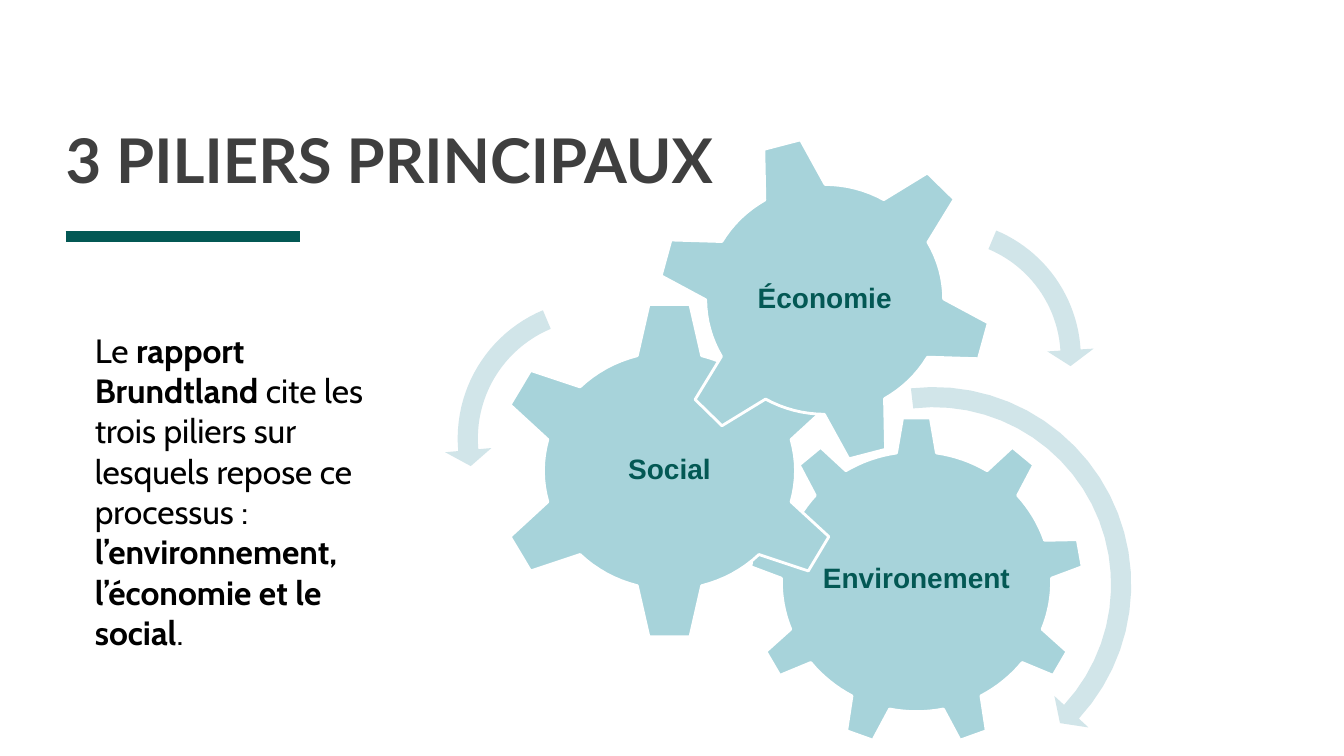
from math import cos, degrees, radians, sin

from lxml.etree import SubElement
from pptx import Presentation
from pptx.dml.color import RGBColor
from pptx.enum.shapes import MSO_CONNECTOR
from pptx.enum.text import MSO_ANCHOR, MSO_AUTO_SIZE, PP_ALIGN
from pptx.oxml.ns import qn
from pptx.util import Inches, Pt

WHITE = RGBColor(0xFF, 0xFF, 0xFF)
BLACK = RGBColor(0x00, 0x00, 0x00)
CHARCOAL = RGBColor(0x3F, 0x3F, 0x3F)
DARK_TEAL = RGBColor(0x03, 0x58, 0x54)
GEAR_BLUE = RGBColor(0xA7, 0xD3, 0xDA)
ARROW_BLUE = RGBColor(0xD1, 0xE5, 0xE9)

ARC_STEPS = 24
BAND_HALF = 0.1
HEAD_HALF = 0.23
HEAD_LENGTH = 0.16

# label, centre, teeth, first tooth angle, root radii, tip radii, root and tip half angles
GEARS = [
    ("Environement", (4.69, 4.47), 9, 0, (1.34, 1.29), (1.65, 1.63), 8.5, 4.8),
    ("Social", (2.24, 3.37), 6, 0, (1.25, 1.18), (1.72, 1.66), 14.8, 6.8),
    ("Économie", (3.78, 1.67), 6, -15, (1.18, 1.14), (1.64, 1.6), 15.2, 6.6),
]
# centre, middle radius, start angle, end angle
ARROWS = [
    ((4.86, 4.5), 1.86, -6.6, 132.7),
    ((1.52, 3.05), 1.28, -22.8, -95.2),
    ((4.95, 2.25), 1.27, 22.8, 86.5),
]
REPORT_RUNS = [
    ("Le ", False),
    ("rapport Brundtland ", True),
    ("cite les trois piliers sur lesquels repose ce processus : ", False),
    ("l’environnement, l’économie et le social", True),
    (".", False),
]


def place(shape, left, top, width, height):
    shape.left, shape.top = Inches(left), Inches(top)
    shape.width, shape.height = Inches(width), Inches(height)


def set_insets(frame, horizontal, vertical):
    frame.margin_left = frame.margin_right = Inches(horizontal)
    frame.margin_top = frame.margin_bottom = Inches(vertical)


def set_font(font, name, size, color, bold=None):
    font.name, font.size, font.bold = name, Pt(size), bold
    font.color.rgb = color


def point_at(centre, radii, angle):
    turn = radians(angle)
    return centre[0] + radii[0] * sin(turn), centre[1] - radii[1] * cos(turn)


def arc(centre, radii, start, end, steps):
    return [
        point_at(centre, radii, start + (end - start) * step / steps)
        for step in range(steps + 1)
    ]


def add_outline(slide, points, color):
    corners = [(Inches(x), Inches(y)) for x, y in points]
    builder = slide.shapes.build_freeform(*corners[0])
    builder.add_line_segments(corners[1:], close=True)
    shape = builder.convert_to_shape()
    shape.shadow.inherit = False
    shape.fill.solid()
    shape.fill.fore_color.rgb = color
    return shape


def add_gear(slide, label, centre, teeth, first, root, tip, root_half, tip_half):
    pitch = 360 / teeth
    points = []
    for tooth in range(teeth):
        angle = first + tooth * pitch
        points += [point_at(centre, tip, angle + side * tip_half) for side in (-1, 1)]
        points += arc(centre, root, angle + root_half, angle + pitch - root_half, 8)
    gear = add_outline(slide, points, GEAR_BLUE)
    gear.line.color.rgb = WHITE
    gear.line.width = Pt(2)
    frame = gear.text_frame
    frame.word_wrap = True
    frame.vertical_anchor = MSO_ANCHOR.MIDDLE
    set_insets(frame, 0.03, 0.03)
    paragraph = frame.paragraphs[0]
    paragraph.text = label
    paragraph.alignment = PP_ALIGN.CENTER
    paragraph.line_spacing = 0.9
    set_font(paragraph.font, "Arial", 20, DARK_TEAL, True)


def add_curved_arrow(slide, centre, radius, start, end):
    direction = 1 if end > start else -1
    tip_angle = end + direction * degrees(HEAD_LENGTH / radius)
    outer, inner = radius + BAND_HALF, radius - BAND_HALF
    points = arc(centre, (outer, outer), start, end, ARC_STEPS)
    for reach, angle in ((HEAD_HALF, end), (0, tip_angle), (-HEAD_HALF, end)):
        points.append(point_at(centre, (radius + reach, radius + reach), angle))
    points += arc(centre, (inner, inner), end, start, ARC_STEPS)
    add_outline(slide, points, ARROW_BLUE).line.fill.background()


def add_pillar_gears(slide, left, top):
    for label, (x, y), *teeth in GEARS:
        add_gear(slide, label, (left + x, top + y), *teeth)
    for (x, y), *sweep in ARROWS:
        add_curved_arrow(slide, (left + x, top + y), *sweep)


def add_heading(slide, left, top, width, height):
    title = slide.shapes.title
    place(title, left, top, width, height)
    frame = title.text_frame
    frame.word_wrap = True
    frame.auto_size = MSO_AUTO_SIZE.NONE
    frame.vertical_anchor = MSO_ANCHOR.BOTTOM
    set_insets(frame, 0, 0)
    paragraph = frame.paragraphs[0]
    paragraph.text = "3 PILIERS PRINCIPAUX"
    paragraph.alignment = PP_ALIGN.LEFT
    paragraph.line_spacing = 0.8
    set_font(paragraph.font, "Lato", 44, CHARCOAL, True)

    rule_top = Inches(top + height + 0.41)
    rule = slide.shapes.add_connector(
        MSO_CONNECTOR.STRAIGHT, Inches(left), rule_top, Inches(left + 2.33), rule_top
    )
    rule.line.color.rgb = DARK_TEAL
    rule.line.width = Pt(8)
    SubElement(rule._element.spPr, qn("a:effectLst"))


def add_report_text(slide, left, top, width, height):
    body = slide.placeholders[1]
    place(body, left, top, width, height)
    frame = body.text_frame
    frame.word_wrap = True
    frame.auto_size = MSO_AUTO_SIZE.NONE
    frame.vertical_anchor = MSO_ANCHOR.TOP
    set_insets(frame, 0.1, 0.05)
    paragraph = frame.paragraphs[0]
    properties = paragraph._p.get_or_add_pPr()
    properties.set("marL", "0")
    properties.set("indent", "0")
    SubElement(properties, qn("a:buNone"))
    paragraph.space_before = Pt(0)
    paragraph.alignment = PP_ALIGN.LEFT
    set_font(paragraph.font, "Cabin", 24, BLACK)
    for text, bold in REPORT_RUNS:
        run = paragraph.add_run()
        run.text = text
        run.font.bold = bold


def main():
    presentation = Presentation()
    presentation.slide_width = Inches(13.33)
    presentation.slide_height = Inches(7.5)
    slide = presentation.slides.add_slide(presentation.slide_layouts[1])
    slide.background.fill.solid()
    slide.background.fill.fore_color.rgb = WHITE
    add_heading(slide, 0.65, 0.22, 12, 1.72)
    add_pillar_gears(slide, 4.4, 1.3)
    add_report_text(slide, 0.84, 3.22, 2.91, 3.33)
    presentation.save("out.pptx")


if __name__ == "__main__":
    main()
